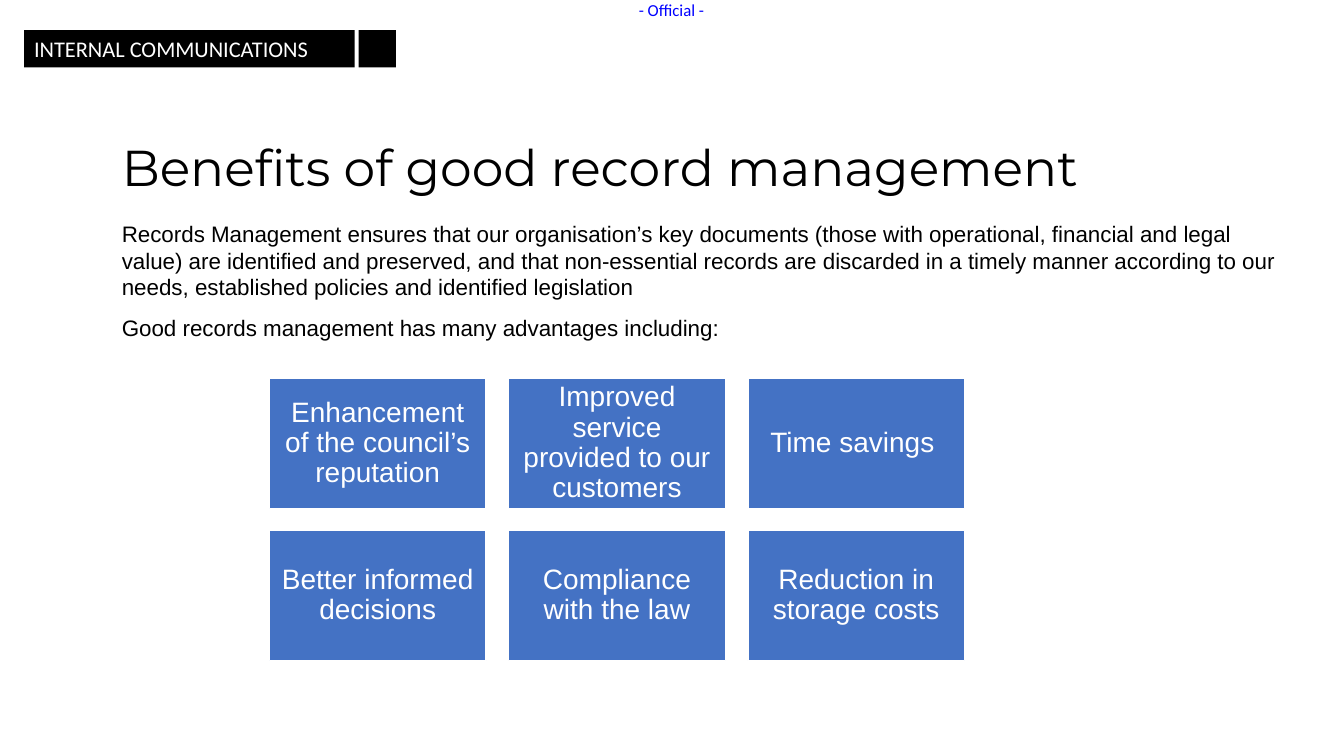
"""Build the slide on the benefits of good record management."""
import pptx
import pptx.util
import pptx.dml.color
import pptx.enum.shapes
import pptx.enum.text

Cm = pptx.util.Cm
Pt = pptx.util.Pt
RECT = pptx.enum.shapes.MSO_SHAPE.RECTANGLE
ALIGN = pptx.enum.text.PP_ALIGN
ANCHOR = pptx.enum.text.MSO_ANCHOR

COLORS = {"black": "000000", "white": "FFFFFF", "tile": "4472C4", "mark": "0000FF"}


def color(name):
    return pptx.dml.color.RGBColor.from_string(COLORS[name])


def write(shape, texts, font, size, ink, inset, para):
    frame = shape.text_frame
    frame.word_wrap = True
    for side, gap in zip(("left", "top", "right", "bottom"), inset):
        setattr(frame, "margin_" + side, Cm(gap))
    for i, text in enumerate(texts):
        line = frame.add_paragraph() if i else frame.paragraphs[0]
        line.text = text
        look = {"name": font, "size": Pt(size)}
        for key, value in look.items():
            setattr(line.font, key, value)
        line.font.color.rgb = color(ink)
        for key, value in para.items():
            setattr(line, key, value)
        if i:
            line.space_before = Pt(10)
    return frame


deck = pptx.Presentation()
deck.slide_width, deck.slide_height = Cm(33.87), Cm(19.05)
slide = deck.slides.add_slide(deck.slide_layouts[6])
shapes = slide.shapes

WIDE = (0.25, 0.13, 0.25, 0.13)
SLIM = (0.2, 0.2, 0.2, 0.2)
NONE = (0, 0, 0, 0)
LEFT = {"alignment": ALIGN.LEFT}
TIGHT = {"alignment": ALIGN.LEFT, "line_spacing": 0.9}
MID = {"alignment": ALIGN.CENTER, "line_spacing": 0.9}

for left, width, label in ((0.61, 8.33, "INTERNAL COMMUNICATIONS"), (9.04, 0.94, "")):
    bar = shapes.add_shape(RECT, Cm(left), Cm(0.76), Cm(width), Cm(0.94))
    bar.shadow.inherit = False
    bar.fill.solid()
    bar.fill.fore_color.rgb = color("black")
    bar.line.fill.background()
    if label:
        frame = write(bar, [label], "Calibri", 16, "white", WIDE, LEFT)
        frame.vertical_anchor = ANCHOR.TOP

mark = shapes.add_textbox(Cm(16.1), Cm(0), Cm(1.75), Cm(0.51))
frame = write(mark, ["- Official -"], "Calibri", 12, "mark", NONE, LEFT)
frame.word_wrap = False

title = shapes.add_textbox(Cm(2.82), Cm(3.48), Cm(30.05), Cm(1.93))
write(title, ["Benefits of good record management"], "Montserrat", 36, "black", WIDE, TIGHT)

body = shapes.add_textbox(Cm(2.82), Cm(5.41), Cm(30.05), Cm(3.6))
write(body, [
    "Records Management ensures that our organisation’s key documents "
    "(those with operational, financial and legal value) are identified and preserved, "
    "and that non-essential records are discarded in a timely manner according "
    "to our needs, established policies and identified legislation",
    "Good records management has many advantages including:",
], "Arial", 16, "black", WIDE, LEFT)

GAINS = (
    ("Enhancement of the council’s reputation",
     "Improved service provided to our customers",
     "Time savings "),
    ("Better informed decisions",
     "Compliance with the law",
     "Reduction in storage costs"),
)
for row, gains in enumerate(GAINS):
    for col, gain in enumerate(gains):
        tile = shapes.add_shape(RECT, Cm(6.79 + 6.03 * col), Cm(9.53 + 3.84 * row),
                                Cm(5.46), Cm(3.28))
        tile.shadow.inherit = False
        tile.fill.solid()
        tile.fill.fore_color.rgb = color("tile")
        tile.line.color.rgb = color("white")
        tile.line.width = Pt(1)
        frame = write(tile, [gain], "Arial", 20, "white", SLIM, MID)
        frame.vertical_anchor = ANCHOR.MIDDLE

deck.save("out.pptx")
